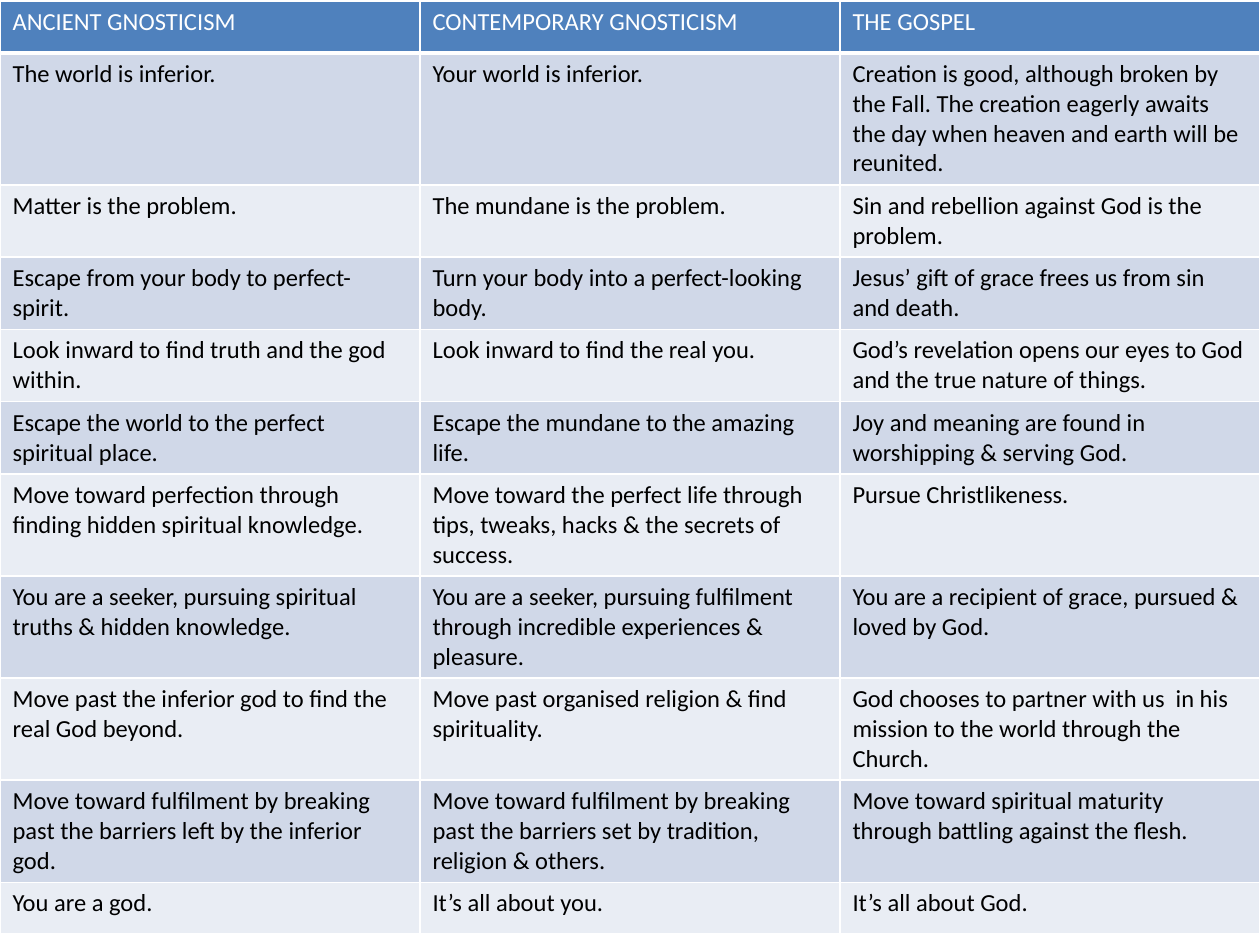
from dataclasses import dataclass

from lxml import etree
from pptx import Presentation
from pptx.dml.color import RGBColor
from pptx.oxml.ns import qn
from pptx.util import Inches, Pt

BLANK_LAYOUT = 6


@dataclass(frozen=True)
class Theme:
    font: str = "Calibri"
    text_size: int = 14
    header_fill: str = "4F81BD"
    header_text: str = "FFFFFF"
    body_text: str = "000000"
    bands: tuple = ("D0D8E8", "E9EDF4")
    border: str = "FFFFFF"
    border_width: int = 1
    header_rule: int = 3


THEME = Theme()
SLIDE_WIDTH, SLIDE_HEIGHT = Inches(10), Inches(7.5)
MIN_ROW_HEIGHT = Inches(0.41)

COMPARISON = [
    ("ANCIENT GNOSTICISM", "CONTEMPORARY GNOSTICISM", "THE GOSPEL"),
    ("The world is inferior.",
     "Your world is inferior.",
     "Creation is good, although broken by the Fall. The creation eagerly "
     "awaits the day when heaven and earth will be reunited."),
    ("Matter is the problem.",
     "The mundane is the problem.",
     "Sin and rebellion against God is the problem."),
    ("Escape from your body to perfect-spirit.",
     "Turn your body into a perfect-looking body.",
     "Jesus’ gift of grace frees us from sin and death."),
    ("Look inward to find truth and the god within.",
     "Look inward to find the real you.",
     "God’s revelation opens our eyes to God and the true nature of things."),
    ("Escape the world to the perfect spiritual place.",
     "Escape the mundane to the amazing life.",
     "Joy and meaning are found in worshipping & serving God."),
    ("Move toward perfection through finding hidden spiritual knowledge.",
     "Move toward the perfect life through tips, tweaks, hacks & the secrets "
     "of success.",
     "Pursue Christlikeness."),
    ("You are a seeker, pursuing spiritual truths & hidden knowledge.",
     "You are a seeker, pursuing fulfilment through incredible experiences & "
     "pleasure.",
     "You are a recipient of grace, pursued & loved by God."),
    ("Move past the inferior god to find the real God beyond.",
     "Move past organised religion & find spirituality.",
     "God chooses to partner with us  in his mission to the world through the "
     "Church."),
    ("Move toward fulfilment by breaking past the barriers left by the "
     "inferior god.",
     "Move toward fulfilment by breaking past the barriers set by tradition, "
     "religion & others.",
     "Move toward spiritual maturity through battling against the flesh."),
    ("You are a god.", "It’s all about you.", "It’s all about God."),
]


def set_borders(cell, bottom_width):
    """Draw all four sides; call before the fill, which must follow them."""
    properties = cell._tc.get_or_add_tcPr()
    for side in ("lnL", "lnR", "lnT", "lnB"):
        width = bottom_width if side == "lnB" else THEME.border_width
        line = etree.SubElement(properties, qn(f"a:{side}"), w=str(Pt(width)))
        fill = etree.SubElement(line, qn("a:solidFill"))
        etree.SubElement(fill, qn("a:srgbClr"), val=THEME.border)


def write_cell(cell, wording, fill, color, bottom_width):
    set_borders(cell, bottom_width)
    cell.fill.solid()
    cell.fill.fore_color.rgb = RGBColor.from_string(fill)
    cell.text = wording
    font = cell.text_frame.paragraphs[0].font
    font.name = THEME.font
    font.size = Pt(THEME.text_size)
    font.bold = False
    font.color.rgb = RGBColor.from_string(color)


def add_comparison(slide, left, top, width, height):
    frame = slide.shapes.add_table(
        len(COMPARISON), len(COMPARISON[0]), left, top, width, height)
    table = frame.table
    for row_index, statements in enumerate(COMPARISON):
        table.rows[row_index].height = MIN_ROW_HEIGHT
        if row_index == 0:
            style = THEME.header_fill, THEME.header_text, THEME.header_rule
        else:
            band = THEME.bands[(row_index - 1) % len(THEME.bands)]
            style = band, THEME.body_text, THEME.border_width
        for column_index, statement in enumerate(statements):
            write_cell(table.cell(row_index, column_index), statement, *style)
    # Rows grow with their text; the frame keeps the full height.
    frame.height = height


def main():
    deck = Presentation()
    deck.slide_width, deck.slide_height = SLIDE_WIDTH, SLIDE_HEIGHT
    slide = deck.slides.add_slide(deck.slide_layouts[BLANK_LAYOUT])
    add_comparison(slide, 0, Inches(0.01), SLIDE_WIDTH, Inches(7.47))
    deck.save("out.pptx")


if __name__ == "__main__":
    main()
